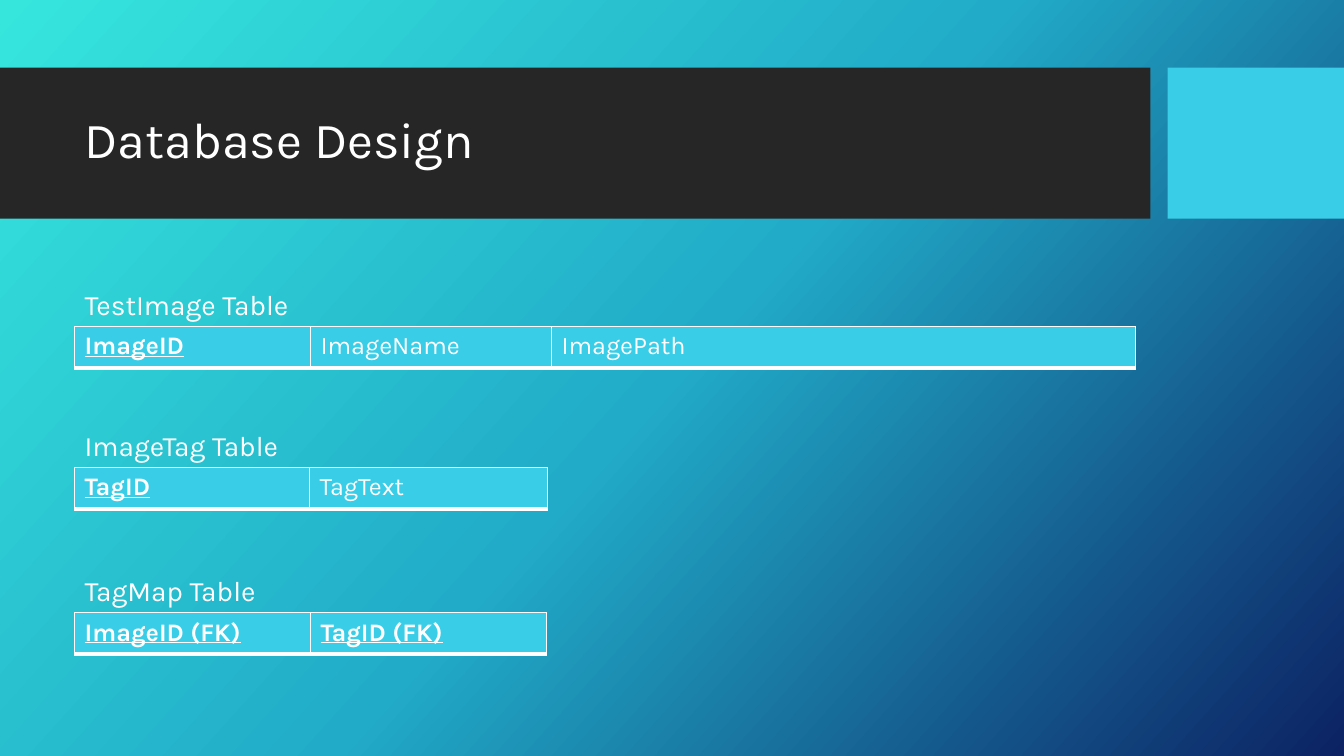
from copy import deepcopy
from dataclasses import dataclass

from lxml import etree
from pptx import Presentation
from pptx import util as u
from pptx.dml import color
from pptx.enum import shapes, text
from pptx.oxml import ns


@dataclass(frozen=True)
class Theme:
    font: str = "Karla"
    white: str = "FFFFFF"
    band: str = "262626"
    accent: str = "39CDE7"
    gradient: tuple = ((0, "36E6DD"), (0.5, "21ABC8"), (1, "0C2263"))
    angle: int = 42
    title: int = 36
    label: int = 20
    cell: int = 18
    borders: tuple = (("lnL", 1), ("lnR", 1), ("lnT", 1), ("lnB", 3))


THEME = Theme()
WIDTH, HEIGHT = 13.33, 7.5
LEFT, CONTENT_WIDTH = 0.74, 10.51
LABEL_HEIGHT, ROW_HEIGHT = 0.44, 0.41
SCHEMAS = (
    ("TestImage Table", 2.8, (("ImageID", 2.34, True), ("ImageName", 2.39, False),
                              ("ImagePath", 5.79, False))),
    ("ImageTag Table", 4.2, (("TagID", 2.33, True), ("TagText", 2.36, False))),
    ("TagMap Table", 5.64, (("ImageID (FK)", 2.34, True), ("TagID (FK)", 2.34, True))),
)


def rgb(value):
    return color.RGBColor.from_string(value)


def inches(*lengths):
    return [u.Inches(length) for length in lengths]


def write(frame, words, size, **extra):
    para = frame.paragraphs[0]
    span = para.add_run()
    span.text = words
    span.font.color.rgb = rgb(THEME.white)
    for name, value in {"name": THEME.font, "size": u.Pt(size), **extra}.items():
        setattr(span.font, name, value)
    return para


def add_text(page, bounds, words, size, anchor=text.MSO_ANCHOR.TOP):
    frame = page.shapes.add_textbox(*inches(*bounds)).text_frame
    for name, value in {"word_wrap": True, "vertical_anchor": anchor}.items():
        setattr(frame, name, value)
    return write(frame, words, size)


def paint_background(page):
    fill = page.background.fill
    fill.gradient()
    fill.gradient_angle = 360 - THEME.angle
    stops = next(page.element.iter(ns.qn("a:gsLst")))
    stops.append(deepcopy(stops[-1]))
    for stop, (position, value) in zip(fill.gradient_stops, THEME.gradient):
        stop.position = position
        stop.color.rgb = rgb(value)


def add_block(page, bounds, value):
    block = page.shapes.add_shape(shapes.MSO_SHAPE.RECTANGLE, *inches(*bounds))
    block.shadow.inherit = False
    block.fill.solid()
    block.fill.fore_color.rgb = rgb(value)
    block.line.fill.background()


def add_header(page, top, height):
    band_width, accent_left = 11.41, 11.58
    add_block(page, (0, top, band_width, height), THEME.band)
    add_block(page, (accent_left, top, WIDTH - accent_left, height), THEME.accent)
    para = add_text(page, (LEFT, top + 0.15, CONTENT_WIDTH, 1.18), "Database Design",
                    THEME.title, text.MSO_ANCHOR.MIDDLE)
    para.line_spacing = 0.9


def add_borders(cell):
    properties = cell._tc.get_or_add_tcPr()
    for index, (side, points) in enumerate(THEME.borders):
        line = etree.Element(ns.qn(f"a:{side}"), w=str(u.Pt(points)))
        fill = etree.SubElement(line, ns.qn("a:solidFill"))
        etree.SubElement(fill, ns.qn("a:srgbClr"), val=THEME.white)
        properties.insert(index, line)


def add_schema(page, left, top, title, fields):
    width = sum(field[1] for field in fields)
    add_text(page, (left, top, CONTENT_WIDTH, LABEL_HEIGHT), title, THEME.label)
    frame = page.shapes.add_table(
        1, len(fields), *inches(left, top + LABEL_HEIGHT, width, ROW_HEIGHT))
    table = frame.table
    for name in ("first_row", "horz_banding"):
        setattr(table, name, False)
    for column, cell, (name, size, is_key) in zip(table.columns, table.rows[0].cells, fields):
        column.width = u.Inches(size)
        cell.fill.solid()
        cell.fill.fore_color.rgb = rgb(THEME.accent)
        add_borders(cell)
        write(cell.text_frame, name, THEME.cell, bold=is_key, underline=is_key)


def main():
    deck = Presentation()
    deck.slide_width, deck.slide_height = inches(WIDTH, HEIGHT)
    page = deck.slides.add_slide(deck.slide_layouts[6])
    paint_background(page)
    add_header(page, 0.67, HEIGHT / 5)
    for title, top, fields in SCHEMAS:
        add_schema(page, LEFT, top, title, fields)
    deck.save("out.pptx")


if __name__ == "__main__":
    main()
